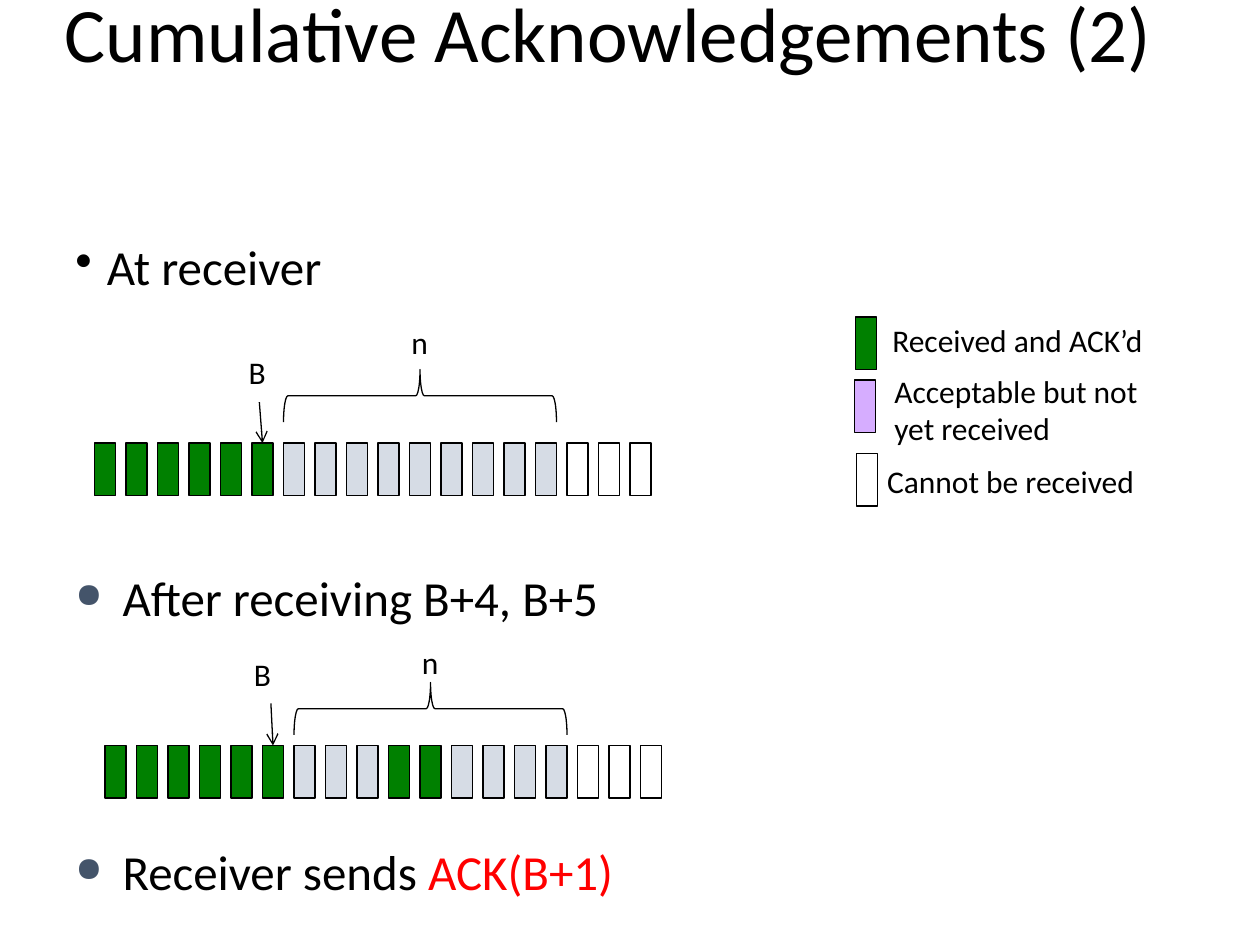
from lxml.etree import SubElement
from pptx import Presentation
from pptx.dml.color import RGBColor
from pptx.enum.shapes import MSO_CONNECTOR, MSO_SHAPE
from pptx.enum.text import MSO_AUTO_SIZE
from pptx.oxml.ns import qn
from pptx.util import Pt

PX = 7620
HUES = {
    "ink": "000000",
    "got": "008000",
    "open": "D6DCE5",
    "key": "D6ADFF",
    "none": "FFFFFF",
    "red": "FF0000",
    "dot": "44546A",
}
TONES = {name: RGBColor.from_string(code) for name, code in HUES.items()}

deck = Presentation()
deck.slide_width = 1200 * PX
deck.slide_height = 900 * PX
slide = deck.slides.add_slide(deck.slide_layouts[6])
shapes = slide.shapes


def add_text(box, text, size, wrap=False, lead=None, gap=None, mark=None):
    frame = shapes.add_textbox(*[n * PX for n in box]).text_frame
    frame.word_wrap = wrap
    frame.auto_size = MSO_AUTO_SIZE.NONE if wrap else MSO_AUTO_SIZE.SHAPE_TO_FIT_TEXT
    para = frame.paragraphs[0]
    para.text = text
    if lead:
        para.line_spacing = lead
    if gap:
        para.space_before = Pt(gap)
    if mark:
        sign, hang, tone, part = mark
        props = para._p.get_or_add_pPr()
        props.set("marL", str(hang * PX))
        props.set("indent", str(-hang * PX))
        if tone:
            SubElement(SubElement(props, qn("a:buClr")), qn("a:srgbClr"), val=HUES[tone])
        SubElement(props, qn("a:buSzPct"), val=str(part * 1000))
        SubElement(props, qn("a:buChar"), char=sign)
    para.font.name = "Calibri"
    para.font.size = Pt(size)
    para.font.color.rgb = TONES["ink"]
    return para


def add_bar(x, y, tone):
    bar = shapes.add_shape(MSO_SHAPE.RECTANGLE, x * PX, y * PX, 20 * PX, 50 * PX)
    bar.shadow.inherit = False
    bar.fill.solid()
    bar.fill.fore_color.rgb = TONES[tone]
    bar.line.color.rgb = TONES["ink"]
    bar.line.width = Pt(0.75)
    return bar


add_text((50, -10, 1100, 154), "Cumulative Acknowledgements (2)", 44, True, 0.9)
add_text((60, 226, 1080, 74), "At receiver", 28, True, 0.9, 10, ("•", 30, None, 100))

dot = ("●", 45, "dot", 70)
add_text((60, 535, 1080, 74), "After receiving B+4, B+5", 28, True, None, 5.6, dot)
send = add_text((60, 796, 1080, 74), "Receiver sends ", 28, True, None, 5.6, dot)
ack = send.add_run()
ack.text = "ACK(B+1)"
ack.font.color.rgb = TONES["red"]

rows = [
    (90, 422, (375, 247), (380, 302), (225, 330), (247, 383), []),
    (100, 710, (385, 545), (390, 607), (230, 618), (258, 670), [9, 10]),
]
for left, top, curve, size, base, tail, early in rows:
    bars = []
    for i in range(18):
        tone = "got" if i < 6 or i in early else "open" if i < 15 else "none"
        bars.append(add_bar(left + 30 * i, top, tone))

    brace = shapes.add_shape(
        MSO_SHAPE.LEFT_BRACE, curve[0] * PX, curve[1] * PX, 50 * PX, 260 * PX
    )
    brace.rotation = 90
    brace.shadow.inherit = False
    brace.fill.background()
    brace.line.color.rgb = TONES["ink"]
    brace.line.width = Pt(0.75)

    add_text((*size, 44, 53), "n", 18)
    add_text((*base, 44, 53), "B", 18)

    arrow = shapes.add_connector(
        MSO_CONNECTOR.STRAIGHT, tail[0] * PX, tail[1] * PX, (left + 160) * PX, top * PX
    )
    arrow.end_connect(bars[5], 0)
    arrow.line.color.rgb = TONES["ink"]
    arrow.line.width = Pt(0.75)
    SubElement(arrow.line._get_or_add_ln(), qn("a:tailEnd"), type="arrow")
    SubElement(arrow._element.spPr, qn("a:effectLst"))

legend = [
    (815, 302, "got", (838, 300, 302, 48), "Received and ACK’d"),
    (814, 362, "key", (840, 348, 277, 85), "Acceptable but not\vyet received"),
    (816, 432, "none", (833, 434, 287, 48), "Cannot be received"),
]
for x, y, tone, box, text in legend:
    add_bar(x, y, tone)
    add_text(box, text, 18)

deck.save("out.pptx")
